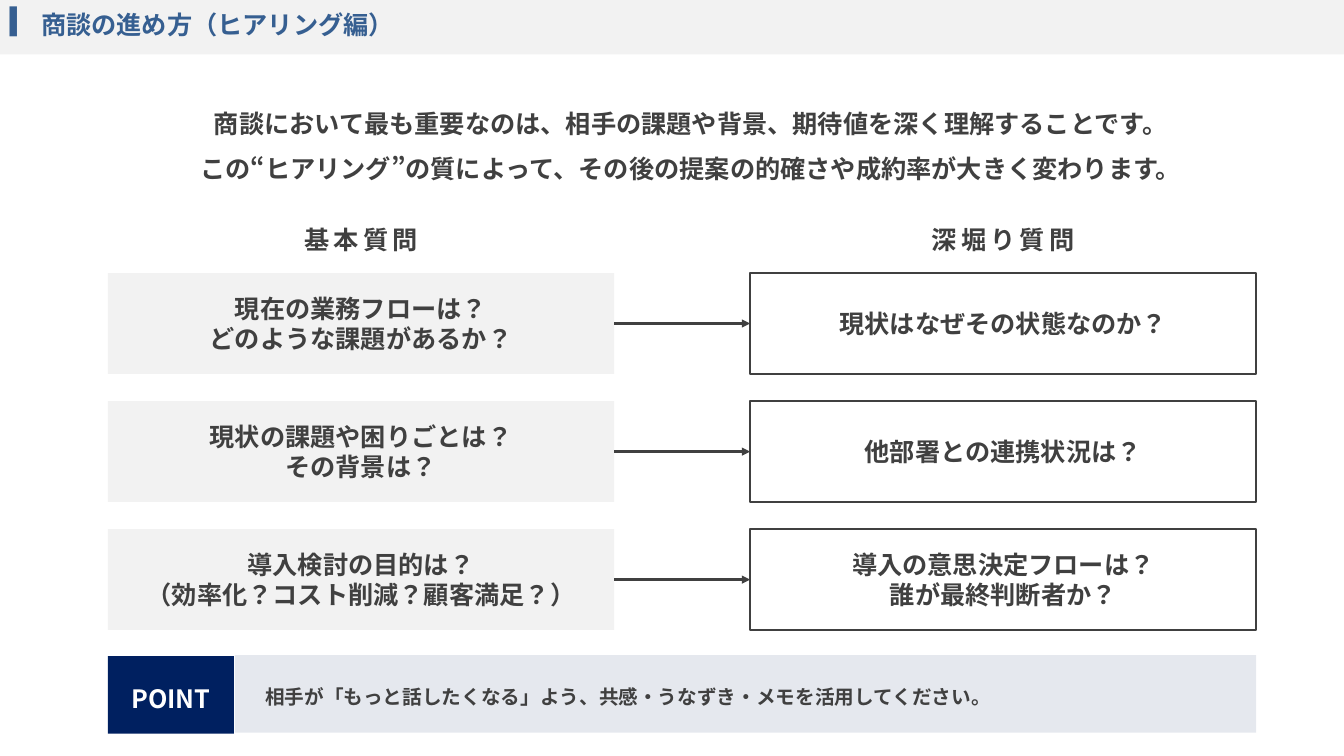
from lxml import etree
from pptx import Presentation
from pptx.dml.color import RGBColor
from pptx.enum.shapes import MSO_CONNECTOR, MSO_SHAPE
from pptx.enum.text import MSO_ANCHOR, PP_ALIGN
from pptx.oxml.ns import qn
from pptx.util import Pt

RECT = MSO_SHAPE.RECTANGLE
STRAIGHT = MSO_CONNECTOR.STRAIGHT
MIDDLE = MSO_ANCHOR.MIDDLE
LEFT, CENTER = PP_ALIGN.LEFT, PP_ALIGN.CENTER
LEFT_SIDE, RIGHT_SIDE = 1, 3

EMU_PER_PX = 9144  # 100 px to the inch
JAPANESE_FONT = "Noto Sans CJK JP"
COLORS = {
    "white": "FFFFFF",
    "gray": "F2F2F2",
    "text": "404040",
    "title": "365F91",
    "navy": "002060",
}

# Layout of the two question columns
BASIC_X, DEEP_X, COLUMN_W = 107, 744, 502
HEADING_Y, HEADING_H = 206, 64
FIRST_ROW_Y, ROW_STEP, ROW_H = 271, 127, 100

QUESTIONS = [
    (["現在の業務フローは？", "どのような課題があるか？"],
     ["現状はなぜその状態なのか？"]),
    (["現状の課題や困りごとは？", "その背景は？"],
     ["他部署との連携状況は？"]),
    (["導入検討の目的は？", "（効率化？コスト削減？顧客満足？）"],
     ["導入の意思決定フローは？", "誰が最終判断者か？"]),
]


def px(length):
    return length * EMU_PER_PX


def rgb(color):
    return RGBColor.from_string(COLORS[color])


def write_text(shape, lines, *, size=18, font=JAPANESE_FONT, color="text",
               align=CENTER, line_spacing=None, space_after=None,
               letter_spacing=None, left_inset=10):
    frame = shape.text_frame
    frame.word_wrap = True
    frame.vertical_anchor = MIDDLE
    frame.margin_left = px(left_inset)
    for index, line in enumerate(lines):
        paragraph = frame.add_paragraph() if index else frame.paragraphs[0]
        paragraph.alignment = align
        if line_spacing:
            paragraph.line_spacing = line_spacing
        if space_after:
            paragraph.space_after = Pt(space_after)
        run = paragraph.add_run()
        run.text = line
        run.font.size = Pt(size)
        run.font.bold = True
        run.font.color.rgb = rgb(color)
        run.font.name = font
        properties = run.font._element
        properties.set("lang", "ja-JP")
        if letter_spacing:
            properties.set("spc", str(letter_spacing * 100))
        etree.SubElement(properties, qn("a:ea"), typeface=JAPANESE_FONT)


def add_box(slide, x, y, w, h, fill, lines, *, outline=None, opacity=None,
            **text_format):
    box = slide.shapes.add_shape(RECT, px(x), px(y), px(w), px(h))
    box.shadow.inherit = False
    box.fill.solid()
    box.fill.fore_color.rgb = rgb(fill)
    if opacity:
        fill_color = box._element.spPr.find(qn("a:solidFill"))[0]
        etree.SubElement(fill_color, qn("a:alpha"), val=str(opacity * 1000))
    if outline:
        box.line.color.rgb = rgb(outline)
        box.line.width = Pt(1.5)
    else:
        box.line.fill.background()
    write_text(box, lines, **text_format)
    return box


def add_heading(slide, x, text):
    heading = slide.shapes.add_textbox(px(x), px(HEADING_Y), px(COLUMN_W),
                                       px(HEADING_H))
    write_text(heading, [text], letter_spacing=3)


def add_bullet(shape, character, indent):
    properties = shape.text_frame.paragraphs[0]._p.get_or_add_pPr()
    properties.set("marL", str(px(indent)))
    properties.set("indent", str(-px(indent)))
    etree.SubElement(properties, qn("a:buChar"), char=character)


def add_arrow(slide, source, target):
    arrow = slide.shapes.add_connector(STRAIGHT, 0, 0, 0, 0)
    arrow.begin_connect(source, RIGHT_SIDE)
    arrow.end_connect(target, LEFT_SIDE)
    arrow.line.color.rgb = rgb("text")
    arrow.line.width = Pt(1.75)
    etree.SubElement(arrow.line._get_or_add_ln(), qn("a:tailEnd"),
                     type="triangle")
    etree.SubElement(arrow._element.spPr, qn("a:effectLst"))


def main():
    deck = Presentation()
    deck.slide_width, deck.slide_height = px(1333), px(750)
    slide = deck.slides.add_slide(deck.slide_layouts[6])

    # Title bar
    title_bar = add_box(slide, 0, -6, 1333, 60, "gray",
                        ["商談の進め方（ヒアリング編）"],
                        font="Arial", color="title", align=LEFT)
    add_bullet(title_bar, "▍", 31)

    # Introduction
    add_box(slide, 124, 92, 1122, 100, "white",
            ["商談において最も重要なのは、相手の課題や背景、期待値を深く理解することです。",
             "この“ヒアリング”の質によって、その後の提案の的確さや成約率が大きく変わります。"],
            line_spacing=1.2, space_after=6)

    # Advice strip
    add_box(slide, 233, 650, 1013, 77, "navy",
            ["相手が「もっと話したくなる」よう、共感・うなずき・メモを活用してください。"],
            opacity=10, size=14, align=LEFT, line_spacing=1.2, left_inset=30)
    add_box(slide, 107, 651, 125, 77, "navy", ["POINT"],
            color="white", line_spacing=1.2)

    # Column headings
    add_heading(slide, BASIC_X, "基本質問")
    add_heading(slide, DEEP_X, "深堀り質問")

    # Each basic question leads to a deeper one
    for row, (basic_lines, deep_lines) in enumerate(QUESTIONS):
        y = FIRST_ROW_Y + row * ROW_STEP
        basic = add_box(slide, BASIC_X, y, COLUMN_W, ROW_H, "gray",
                        basic_lines, font="Arial")
        deep = add_box(slide, DEEP_X, y, COLUMN_W, ROW_H, "white",
                       deep_lines, font="Arial", outline="text")
        add_arrow(slide, basic, deep)

    deck.save("out.pptx")


if __name__ == "__main__":
    main()
